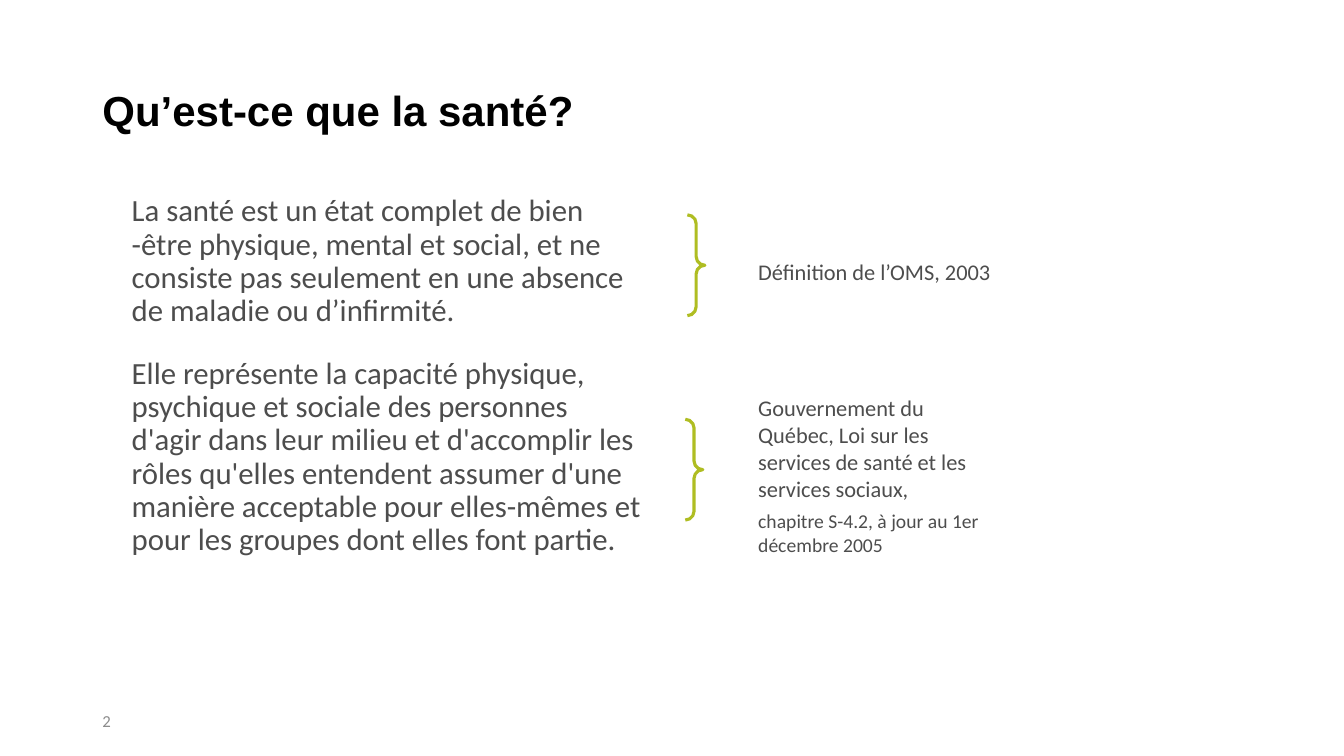
from dataclasses import dataclass

from pptx import Presentation
from pptx.dml.color import RGBColor
from pptx.enum.shapes import MSO_SHAPE
from pptx.enum.text import MSO_ANCHOR, PP_ALIGN
from pptx.util import Pt


@dataclass(frozen=True)
class Theme:
    head: str = "Arial"
    body: str = "Calibri"
    black: RGBColor = RGBColor(0x00, 0x00, 0x00)
    text: RGBColor = RGBColor(0x4D, 0x4D, 0x4D)
    pale: RGBColor = RGBColor(0x8C, 0x8C, 0x8C)
    green: RGBColor = RGBColor(0xAF, 0xBD, 0x22)
    title: int = 30
    main: int = 22
    note: int = 16
    small: int = 14
    page: int = 12


THEME = Theme()

MEANINGS = [
    ("La santé est un état complet de bien -être physique, mental et social, "
     "et ne consiste pas seulement en une absence de maladie ou d’infirmité.",
     THEME.main, 0),
    ("Elle représente la capacité physique, psychique et sociale des "
     "personnes d'agir dans leur milieu et d'accomplir les rôles qu'elles "
     "entendent assumer d'une manière acceptable pour elles-mêmes et pour "
     "les groupes dont elles font partie.", THEME.main, 21),
]
SOURCES = [
    ("Définition de l’OMS, 2003", THEME.note, 0),
    ("Gouvernement du Québec, Loi sur les services de santé et les services "
     "sociaux,", THEME.note, 78),
    ("chapitre S-4.2, à jour au 1er décembre 2005", THEME.small, 5),
]


def place(shape, left, top, width, height):
    shape.left, shape.top = Pt(left), Pt(top)
    shape.width, shape.height = Pt(width), Pt(height)


def add_run(para, text, size, color, font=THEME.body, bold=False):
    run = para.add_run()
    run.text = text
    run.font.name = font
    run.font.size = Pt(size)
    run.font.bold = bold
    run.font.color.rgb = color


def add_title(slide, text):
    title = slide.shapes.title
    place(title, 66, 29, 828, 104)
    frame = title.text_frame
    frame.vertical_anchor = MSO_ANCHOR.MIDDLE
    para = frame.paragraphs[0]
    para.alignment = PP_ALIGN.LEFT
    para.line_spacing = 0.9
    add_run(para, text, THEME.title, THEME.black, THEME.head, True)


def add_text(slide, box, items, color=THEME.text, lines=1.0,
             anchor=MSO_ANCHOR.TOP):
    """Add a text box; each item is text, size and space before."""
    frame = slide.shapes.add_textbox(*map(Pt, box)).text_frame
    frame.word_wrap = True
    frame.vertical_anchor = anchor
    for i, (text, size, gap) in enumerate(items):
        para = frame.add_paragraph() if i else frame.paragraphs[0]
        para.line_spacing = lines
        para.space_before = Pt(gap)
        add_run(para, text, size, color)


def add_brace(slide, left, top):
    brace = slide.shapes.add_shape(
        MSO_SHAPE.RIGHT_BRACE, Pt(left), Pt(top), Pt(12.5), Pt(72))
    brace.adjustments[0] = 0.5
    brace.shadow.inherit = False
    brace.fill.background()
    brace.line.color.rgb = THEME.green
    brace.line.width = Pt(2.25)


def main():
    deck = Presentation()
    deck.slide_width, deck.slide_height = Pt(960), Pt(540)
    slide = deck.slides.add_slide(deck.slide_layouts[5])
    add_text(slide, (66, 500.5, 216, 29), [("2", THEME.page, 0)],
             THEME.pale, anchor=MSO_ANCHOR.MIDDLE)
    add_title(slide, "Qu’est-ce que la santé?")
    add_text(slide, (87, 136, 378, 365), MEANINGS, lines=0.9)
    add_text(slide, (534.5, 181, 181.5, 303), SOURCES)
    for left, top in ((491, 153.5), (489.5, 299.5)):
        add_brace(slide, left, top)
    deck.save("out.pptx")


if __name__ == "__main__":
    main()
